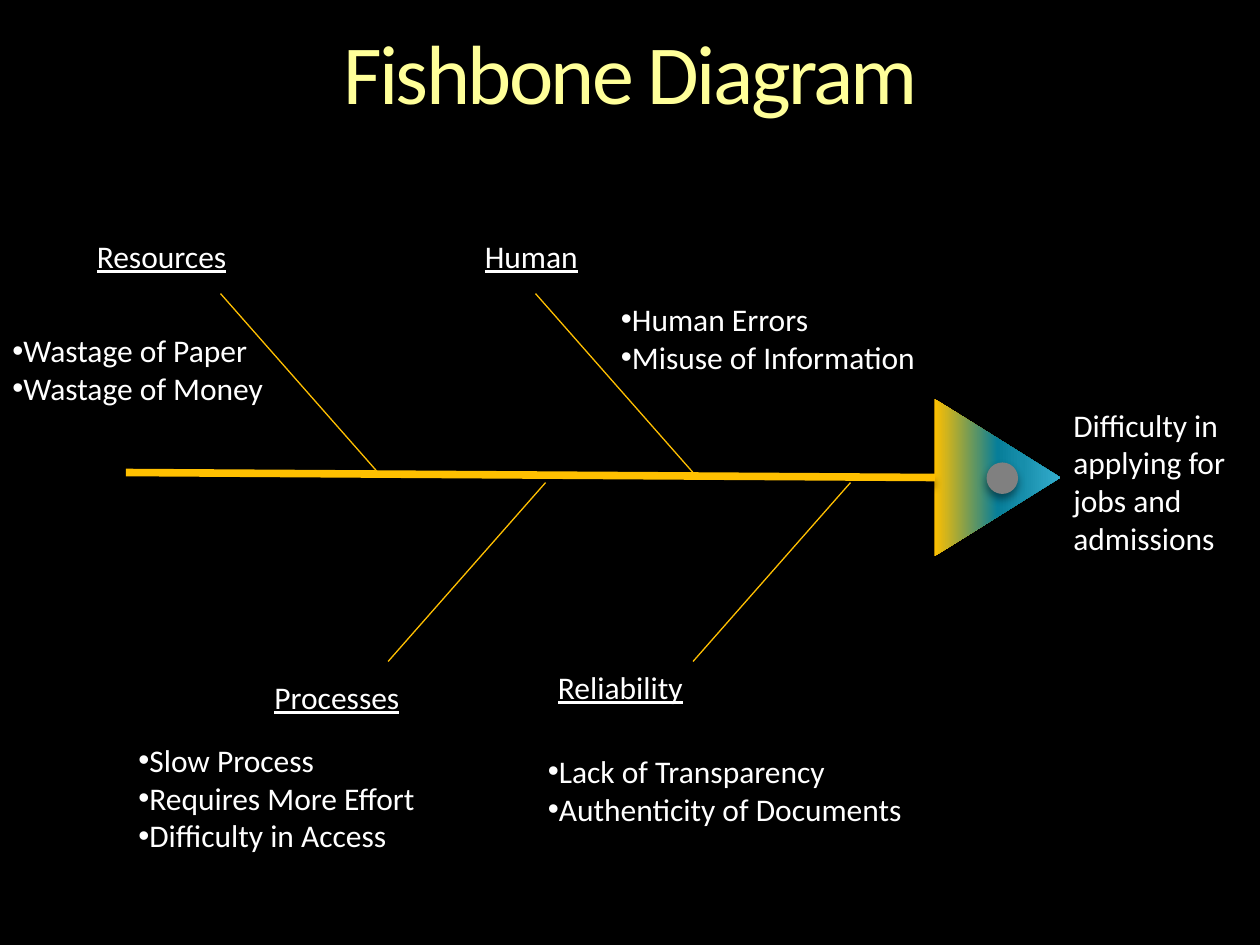
import pptx
import pptx.dml.color
import pptx.enum.shapes
import pptx.enum.text
import pptx.oxml.ns
import pptx.util
from lxml import etree

# Content: texts and their boxes, in inches (left, top, width, height)
TITLE = ("Fishbone Diagram", (0.42, 0.25, 9.17, 0.73))
EFFECT = ("Difficulty in applying for jobs and admissions", (8.42, 3.17, 1.42, 1.31))
CAUSES = [
    dict(name="Processes", name_box=(2.08, 5.33, 1.33, 0.4),
         points=["Slow Process", "Requires More Effort", "Difficulty in Access"],
         points_box=(1, 5.83, 2.42, 1.31), joint=4.33, above=False),
    dict(name="Human", name_box=(3.75, 1.83, 1, 0.4),
         points=["Human Errors", "Misuse of Information"],
         points_box=(4.83, 2.33, 3.08, 0.71), joint=5.5, above=True),
    dict(name="Reliability", name_box=(4.33, 5.25, 1.75, 0.42),
         points=["Lack of Transparency", "Authenticity of Documents"],
         points_box=(4.25, 5.92, 3.17, 1.01), joint=6.75, above=False),
    dict(name="Resources", name_box=(0.67, 1.83, 1.75, 0.42),
         points=["Wastage of Paper", "Wastage of Money"],
         points_box=(0, 2.58, 2.25, 0.71), joint=3, above=True),
]

# Fish geometry
SPINE = ((7.42, 3.79), (1, 3.75))
HEAD = (7.29, 3.29, 1.25, 1)
EYE = (7.83, 3.67, 0.25, 0.25)
BONE_RUN, BONE_RISE = 1.25, 1.42
JOINT_ABOVE, JOINT_BELOW = 3.75, 3.83

THEME = dict(
    font="Calibri", title_size=48, text_size=18,
    background="000000", text="FFFFFF", bone="FFC000", eye="808080", shadow="000000",
    title=[(0, "FFFFB9"), (36, "FFFF99"), (86, "F6AE1E")],
    head=[(0, "FFC000"), (50, "077E99"), (70, "178EAB"), (100, "35ADCE")],
    spine_width=4.33, bone_width=0.75,
)

SHAPES = pptx.enum.shapes.MSO_SHAPE
qn = pptx.oxml.ns.qn


def rgb(value):
    return pptx.dml.color.RGBColor.from_string(value)


def inches(values):
    return [pptx.util.Inches(value) for value in values]


def child(parent, tag, **attributes):
    node = etree.SubElement(parent, qn(tag))
    for name, value in attributes.items():
        node.set(name, str(value))
    return node


def paint_gradient(fill, owner, stops, angle):
    """Give a fill any number of stops, at an angle that ignores rotation."""
    fill.gradient()
    gradient = next(owner.iter(qn("a:gradFill")))
    for node in list(gradient):
        gradient.remove(node)
    gradient.set("rotWithShape", "0")
    stop_list = child(gradient, "a:gsLst")
    for position, colour in stops:
        stop = child(stop_list, "a:gs", pos=position * 1000)
        child(stop, "a:srgbClr", val=colour)
    child(gradient, "a:lin", ang=angle * 60000, scaled=0)


def set_shadow(shape, alpha=None, blur=0, distance=0):
    """Replace the theme shadow by a downward one, or by none."""
    properties = shape.element.spPr
    for node in properties.findall(qn("a:effectLst")):
        properties.remove(node)
    effects = child(properties, "a:effectLst")
    if alpha:
        shadow = child(effects, "a:outerShdw", blurRad=pptx.util.Pt(blur),
                       dist=pptx.util.Pt(distance), dir=90 * 60000, rotWithShape=0)
        colour = child(shadow, "a:srgbClr", val=THEME["shadow"])
        child(colour, "a:alpha", val=alpha * 1000)


def add_text(page, text, area, size=THEME["text_size"], underline=None, bullet=False,
             centred=False, inset=True, line_spacing=None, tracking=None, gradient=None):
    box = page.shapes.add_textbox(*inches(area))
    frame = box.text_frame
    frame.word_wrap = True
    frame.auto_size = pptx.enum.text.MSO_AUTO_SIZE.SHAPE_TO_FIT_TEXT
    if not inset:
        frame.margin_left = frame.margin_right = frame.margin_top = frame.margin_bottom = 0
    for index, line in enumerate([text] if isinstance(text, str) else text):
        para = frame.add_paragraph() if index else frame.paragraphs[0]
        if bullet:
            properties = para._p.get_or_add_pPr()
            child(properties, "a:buFont", typeface="Arial")
            child(properties, "a:buChar", char="•")
        if centred:
            para.alignment = pptx.enum.text.PP_ALIGN.CENTER
        if line_spacing:
            para.line_spacing = line_spacing
        span = para.add_run()
        span.text = line
        span.font.name = THEME["font"]
        span.font.size = pptx.util.Pt(size)
        span.font.underline = underline
        if gradient:
            paint_gradient(span.font.fill, box.element, gradient, 90)
        else:
            span.font.color.rgb = rgb(THEME["text"])
        if tracking:
            span._r.get_or_add_rPr().set("spc", str(int(tracking * 100)))
    return box


def add_line(page, start, end, width):
    line = page.shapes.add_connector(pptx.enum.shapes.MSO_CONNECTOR.STRAIGHT,
                                     *inches(start + end))
    line.line.color.rgb = rgb(THEME["bone"])
    line.line.width = pptx.util.Pt(width)
    set_shadow(line)
    return line


def add_solid(page, kind, area):
    shape = page.shapes.add_shape(kind, *inches(area))
    shape.line.fill.background()
    return shape


def main():
    deck = pptx.Presentation()
    deck.slide_width, deck.slide_height = inches((10, 7.5))
    page = deck.slides.add_slide(deck.slide_layouts[6])
    page.background.fill.solid()
    page.background.fill.fore_color.rgb = rgb(THEME["background"])

    # Title
    add_text(page, *TITLE, size=THEME["title_size"], centred=True, inset=False,
             line_spacing=0.9, tracking=-1.5, gradient=THEME["title"])

    # Head, effect and spine
    head = add_solid(page, SHAPES.ISOSCELES_TRIANGLE, HEAD)
    head.rotation = 90
    paint_gradient(head.fill, head.element, THEME["head"], 0)
    set_shadow(head, alpha=45, blur=5, distance=3)
    add_text(page, *EFFECT)
    spine = add_line(page, *SPINE, THEME["spine_width"])
    set_shadow(spine, alpha=35, blur=4, distance=3)

    # Bones with their causes
    for cause in CAUSES:
        joint_y = JOINT_ABOVE if cause["above"] else JOINT_BELOW
        tip_y = joint_y + (-BONE_RISE if cause["above"] else BONE_RISE)
        add_line(page, (cause["joint"] - BONE_RUN, tip_y), (cause["joint"], joint_y),
                 THEME["bone_width"])
        add_text(page, cause["name"], cause["name_box"], underline=True)
        add_text(page, cause["points"], cause["points_box"], bullet=True)

    # Eye
    eye = add_solid(page, SHAPES.OVAL, EYE)
    eye.fill.solid()
    eye.fill.fore_color.rgb = rgb(THEME["eye"])
    set_shadow(eye, alpha=45, blur=5, distance=3)

    deck.save("out.pptx")


if __name__ == "__main__":
    main()
